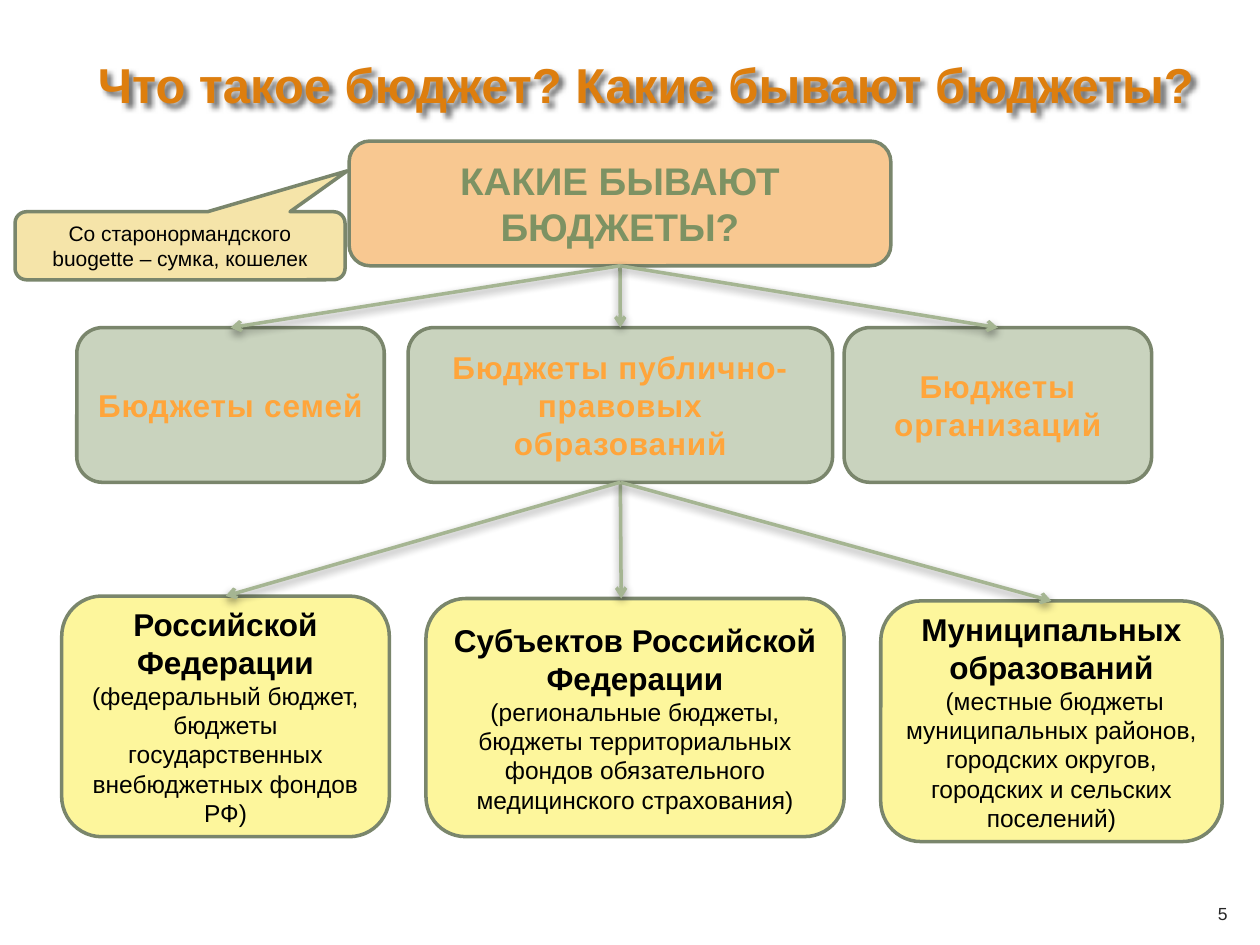
from lxml import etree
from pptx import Presentation
from pptx.dml.color import RGBColor
from pptx.enum.shapes import MSO_CONNECTOR, MSO_SHAPE
from pptx.enum.text import MSO_ANCHOR, PP_ALIGN
from pptx.oxml.ns import qn
from pptx.util import Pt

ROUNDED = MSO_SHAPE.ROUNDED_RECTANGLE
CALLOUT = MSO_SHAPE.ROUNDED_RECTANGULAR_CALLOUT
STRAIGHT = MSO_CONNECTOR.STRAIGHT
CENTER = PP_ALIGN.CENTER
MIDDLE = MSO_ANCHOR.MIDDLE
TOP, BOTTOM = 0, 2

COLORS = {
    "title": "DD7E0E", "number": "262626", "black": "000000",
    "header": "F8C891", "header_text": "7D9263",
    "kind": "C9D3BE", "kind_text": "FFA53B", "kind_text_end": "D3770B",
    "level": "FDF69C", "note": "F5E4A9",
    "outline": "7A866C", "arrow": "A5B592",
}


def rgb(name):
    return RGBColor.from_string(COLORS[name])


def write(paragraph, text, size=18, color="black", bold=False, gradient_end=None, spacing=None):
    """Add one formatted run to a centred paragraph."""
    paragraph.alignment = CENTER
    run = paragraph.add_run()
    run.text = text
    font = run.font
    font.name, font.size, font.bold = "Arial", Pt(size), bold
    if gradient_end:
        font.fill.gradient()
        font.fill.gradient_angle = 270
        for stop, name, position in zip(font.fill.gradient_stops, (color, gradient_end), (0.25, 1)):
            stop.color.rgb = rgb(name)
            stop.position = position
    else:
        font.color.rgb = rgb(color)
    if spacing:
        run._r.get_or_add_rPr().set("spc", str(int(spacing * 100)))


def add_shadow(shape, blur, distance, angle, opacity):
    effects = etree.SubElement(shape._element.spPr, qn("a:effectLst"))
    shadow = etree.SubElement(effects, qn("a:outerShdw"), blurRad=str(Pt(blur)), dist=str(Pt(distance)),
                              dir=str(angle * 60000), algn="tl", rotWithShape="0")
    black = etree.SubElement(shadow, qn("a:srgbClr"), val=COLORS["black"])
    etree.SubElement(black, qn("a:alpha"), val=str(opacity * 1000))


class BudgetSlide:
    line_width = Pt(2)

    def __init__(self, presentation):
        self.shapes = presentation.slides.add_slide(presentation.slide_layouts[6]).shapes

    def frame(self, shape):
        frame = shape.text_frame
        frame.word_wrap = True
        frame.vertical_anchor = MIDDLE
        return frame

    def label(self, place, text, **style):
        label = self.shapes.add_textbox(*map(Pt, place))
        write(self.frame(label).paragraphs[0], text, **style)
        return label

    def box(self, place, fill, paragraphs, preset=ROUNDED):
        """Each paragraph is a list of (text, style) runs."""
        box = self.shapes.add_shape(preset, *map(Pt, place))
        box.shadow.inherit = False
        box.fill.solid()
        box.fill.fore_color.rgb = rgb(fill)
        box.line.color.rgb = rgb("outline")
        box.line.width = self.line_width
        frame = self.frame(box)
        for index, runs in enumerate(paragraphs):
            paragraph = frame.add_paragraph() if index else frame.paragraphs[0]
            for text, style in runs:
                write(paragraph, text, **style)
        return box

    def arrow(self, parent, child, end_x=None):
        """Join parent to child; end_x marks an end off the middle of the side."""
        x = parent.left + parent.width // 2
        end = child.left + child.width // 2 if end_x is None else Pt(end_x)
        arrow = self.shapes.add_connector(STRAIGHT, x, parent.top + parent.height, end, child.top)
        arrow.begin_connect(parent, BOTTOM)
        if end_x is None:
            arrow.end_connect(child, TOP)
        arrow.line.color.rgb = rgb("arrow")
        arrow.line.width = self.line_width
        etree.SubElement(arrow.line._get_or_add_ln(), qn("a:tailEnd"), type="arrow")
        add_shadow(arrow, 5, 2, 90, 43)


def main():
    presentation = Presentation()
    presentation.slide_width, presentation.slide_height = Pt(720), Pt(540)
    slide = BudgetSlide(presentation)

    # Page number and title
    slide.label((680.4, 507.6, 36.7, 28.8), "5", size=10, color="number")
    title = slide.label((36, 13, 666, 69.8), "Что такое бюджет? Какие бывают бюджеты?",
                        size=28, color="title", bold=True)
    add_shadow(title, 3, 3, 45, 60)

    # Question at the top
    question = slide.box((199.5, 80.6, 309.6, 71.3), "header", [
        [("КАКИЕ БЫВАЮТ БЮДЖЕТЫ?", dict(size=22, color="header_text", bold=True))]])

    # Kinds of budget
    kind_style = dict(color="kind_text", gradient_end="kind_text_end", bold=True, spacing=0.5)
    public, family, company = [
        slide.box((left, 187.2, width, 88.4), "kind", [[(text, kind_style)]])
        for left, width, text in (
            (233.2, 242.6, "Бюджеты публично-правовых образований"),
            (43.9, 175.7, "Бюджеты семей"),
            (482.4, 175.7, "Бюджеты организаций"))]

    # Levels of public budgets
    name_style, detail_style = dict(bold=True), dict(size=14)
    federal = slide.box((35.3, 340.6, 187.2, 137.5), "level", [
        [("Российской Федерации ", name_style),
         ("(федеральный бюджет, бюджеты государственных внебюджетных фондов РФ)", detail_style)]])
    regional, municipal = [
        slide.box(place, "level", [[(name, name_style)], [(detail, detail_style)]])
        for place, name, detail in (
            ((243.4, 342, 239, 136.1), "Субъектов Российской Федерации",
             "(региональные бюджеты, бюджеты территориальных фондов обязательного медицинского страхования)"),
            ((503.3, 343.4, 195.1, 137.5), "Муниципальных образований",
             " (местные бюджеты муниципальных районов, городских округов, городских и сельских поселений)"))]

    # Arrows between the tiers
    slide.arrow(public, regional, end_x=355)
    for parent, child in ((public, municipal), (public, federal),
                          (question, public), (question, company), (question, family)):
        slide.arrow(parent, child)

    # Origin of the word
    origin = slide.box((8.6, 121, 188.6, 38.9), "note", [
        [("Со старонормандского buogette – сумка, кошелек", dict(size=12))]], CALLOUT)
    for index, value in enumerate((0.507, -1.101, 0.167)):
        origin.adjustments[index] = value

    presentation.save("out.pptx")


if __name__ == "__main__":
    main()
